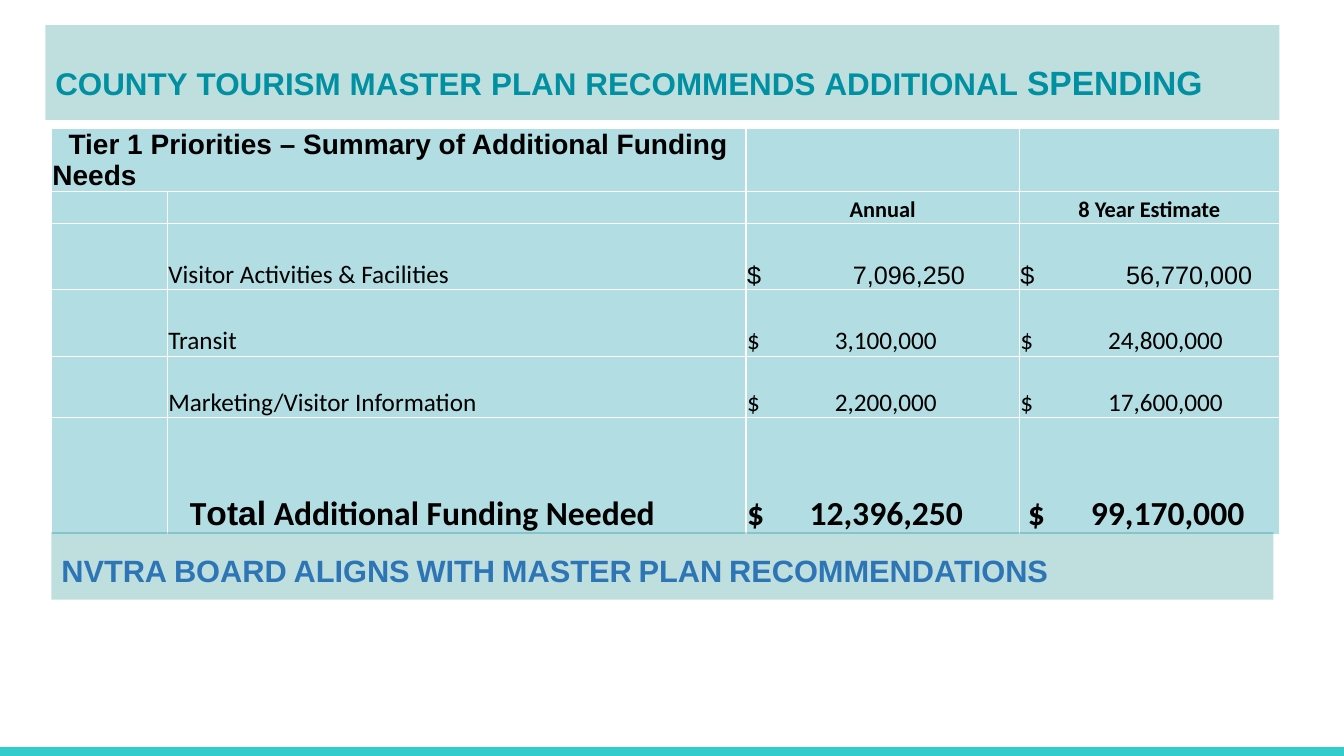
"""Slide on the additional spending advised by a county tourism master plan."""
from lxml.etree import SubElement
from pptx import Presentation
from pptx.dml.color import RGBColor
from pptx.enum.shapes import MSO_CONNECTOR, MSO_SHAPE
from pptx.enum.text import MSO_ANCHOR, PP_ALIGN
from pptx.oxml.ns import qn
from pptx.util import Inches, Pt

HUES = {"band": "008080", "teal": "0090A1", "blue": "2E75B6",
        "aqua": "33CCCC", "black": "000000", "white": "FFFFFF"}


def tint(fill, hue, alpha):
    fill.solid()
    fill.fore_color.rgb = RGBColor.from_string(HUES[hue])
    color = fill._xPr.find(qn("a:solidFill"))[0]
    SubElement(color, qn("a:alpha"), val=str(alpha * 1000))


def write(para, text, size, face, hue="black", bold=False):
    run = para.add_run()
    run.text = text
    font = run.font
    font.size, font.name, font.bold = Pt(size), face, bold
    font.color.rgb = RGBColor.from_string(HUES[hue])
    return run


deck = Presentation()
deck.slide_width, deck.slide_height = Inches(13.33), Inches(7.5)
slide = deck.slides.add_slide(deck.slide_layouts[6])
shapes = slide.shapes

rule = shapes.add_connector(MSO_CONNECTOR.STRAIGHT, 0, Inches(7.48),
                            Inches(13.33), Inches(7.48))
rule.line.color.rgb = RGBColor.from_string(HUES["aqua"])
rule.line.width = Pt(10)
SubElement(rule._element.spPr, qn("a:effectLst"))

cols = [1.15, 5.74, 2.71, 2.58]
rows = [0.54, 0.31, 0.66, 0.66, 0.61, 1.16]
frame = shapes.add_table(len(rows), len(cols), Inches(0.51), Inches(1.27),
                         Inches(12.18), Inches(3.93))
table = frame.table
table.first_row = table.horz_banding = False
for col, width in zip(table.columns, cols):
    col.width = Inches(width)
for row, height in zip(table.rows, rows):
    row.height = Inches(height)

for cell in table.iter_cells():
    cell.margin_left = cell.margin_right = cell.margin_top = Inches(0.01)
    cell.margin_bottom = 0
    cell.vertical_anchor = MSO_ANCHOR.BOTTOM
    props = cell._tc.get_or_add_tcPr()
    for side in ("lnL", "lnR", "lnT", "lnB"):
        edge = SubElement(props, qn(f"a:{side}"), w=str(Pt(1)))
        paint = SubElement(edge, qn("a:solidFill"))
        SubElement(paint, qn("a:srgbClr"), val=HUES["white"])
    tint(cell.fill, "teal", 30)

head = table.cell(0, 0)
head.merge(table.cell(0, 1))
para = head.text_frame.paragraphs[0]
para._p.get_or_add_pPr().set("indent", str(Inches(0.16)))
write(para, "Tier 1 Priorities – Summary of Additional Funding Needs",
      20, "Arial", bold=True)

for col, text in enumerate(["Annual", "8 Year Estimate"], 2):
    para = table.cell(1, col).text_frame.paragraphs[0]
    para.alignment = PP_ALIGN.CENTER
    write(para, text, 16, "Calibri", bold=True)

needs = [("Visitor Activities & Facilities", "Arial", "7,096,250", "56,770,000"),
         ("Transit", "Calibri", "3,100,000", "24,800,000"),
         ("Marketing/Visitor Information", "Calibri", "2,200,000", "17,600,000")]
sums = []
for row, (name, face, year, span) in enumerate(needs, 2):
    write(table.cell(row, 1).text_frame.paragraphs[0], name, 18, "Calibri")
    stop = 1.05 if face == "Arial" else 0.87
    sums += [(row, 2, f"$\t{year}", stop, 18, face),
             (row, 3, f"$\t{span}", stop, 18, face)]
sums += [(5, 2, "$\t12,396,250", 0.62, 24, "Calibri"),
         (5, 3, " $\t99,170,000", 0.7, 24, "Calibri")]
for row, col, text, stop, size, face in sums:
    para = table.cell(row, col).text_frame.paragraphs[0]
    tabs = SubElement(para._p.get_or_add_pPr(), qn("a:tabLst"))
    SubElement(tabs, qn("a:tab"), pos=str(Inches(stop)), algn="l")
    write(para, text, size, face, bold=size == 24)

total = table.cell(5, 1)
total.margin_right = Inches(0.69)
para = total.text_frame.paragraphs[0]
para.alignment = PP_ALIGN.CENTER
for text, face in [("T", "Calibri"), ("otal", "Arial"),
                   (" Additional Funding Needed", "Calibri")]:
    write(para, text, 24, face, bold=True)

bands = [
    (0.45, 0.25, 12.24, 0.94, "teal",
     [("county tourism master plan recommends additional ", 28),
      ("spending", 30)]),
    (0.51, 5.28, 12.12, 0.67, "blue",
     [("NVTRA BOARD ALIGNS WITH MASTER PLAN RECOMMENDATIONS", 22)]),
]
for left, top, width, height, hue, runs in bands:
    band = shapes.add_shape(MSO_SHAPE.RECTANGLE, Inches(left), Inches(top),
                            Inches(width), Inches(height))
    band.shadow.inherit = False
    band.line.fill.background()
    tint(band.fill, "band", 25)
    body = band.text_frame
    body.word_wrap = True
    body.vertical_anchor = MSO_ANCHOR.MIDDLE
    para = body.paragraphs[0]
    para.alignment = PP_ALIGN.LEFT
    para.line_spacing = 1.25
    for text, size in runs:
        run = write(para, text, size, "Arial", hue, True)
        run.font._element.set("cap", "small")

deck.save("out.pptx")
